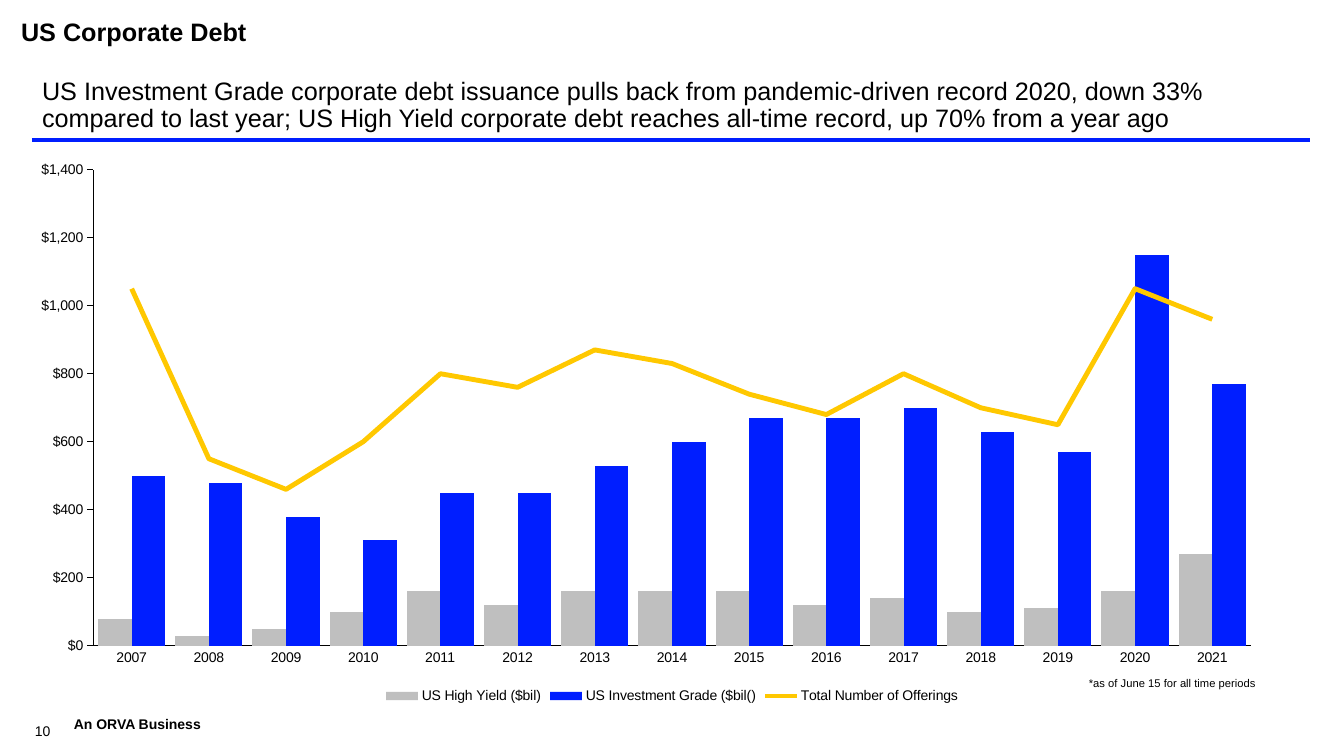
from dataclasses import dataclass

from lxml import etree
from pptx import Presentation
from pptx.chart.data import CategoryChartData
from pptx.dml.color import RGBColor as RGB
from pptx.enum.chart import XL_CHART_TYPE as ChartType
from pptx.enum.chart import XL_LEGEND_POSITION as LegendPosition
from pptx.enum.chart import XL_MARKER_STYLE as Marker
from pptx.enum.chart import XL_TICK_MARK as Tick
from pptx.enum.shapes import MSO_CONNECTOR as Connector
from pptx.enum.text import MSO_ANCHOR as Anchor
from pptx.enum.text import MSO_AUTO_SIZE as AutoSize
from pptx.enum.text import PP_ALIGN as Align
from pptx.oxml import parse_xml
from pptx.oxml.ns import nsdecls, qn
from pptx.util import Emu, Pt

# Content
TITLE = "US Corporate Debt"
HEADLINE = (
    "US Investment Grade corporate debt issuance pulls back from pandemic-driven "
    "record 2020, down 33% compared to last year; US High Yield corporate debt "
    "reaches all-time record, up 70% from a year ago"
)
FOOTNOTE = "*as of June 15 for all time periods"
BUSINESS = "An ORVA Business"
PAGE_NUMBER = "10"
YEARS = [str(year) for year in range(2007, 2022)]
HIGH_YIELD = [80, 30, 50, 100, 160, 120, 160, 160, 160, 120, 140, 100, 110, 160, 270]
INVESTMENT_GRADE = [500, 480, 380, 310, 450, 450, 530, 600, 670, 670, 700, 630, 570, 1150, 770]
OFFERINGS = [1050, 550, 460, 600, 800, 760, 870, 830, 740, 680, 800, 700, 650, 1050, 960]


@dataclass(frozen=True)
class Theme:
    font: str = "Arial"
    ink: RGB = RGB(0, 0, 0)
    blue: RGB = RGB(0x00, 0x1E, 0xFF)
    grey: RGB = RGB(0xBF, 0xBF, 0xBF)
    gold: RGB = RGB(0xFF, 0xC8, 0x00)
    heading: int = 18
    label: int = 10
    note: int = 8


THEME = Theme()
SERIES = [
    ("US High Yield ($bil)", HIGH_YIELD, THEME.grey),
    ("US Investment Grade ($bil()", INVESTMENT_GRADE, THEME.blue),
    ("Total Number of Offerings", OFFERINGS, THEME.gold),
]

# Places in px: left, top, width, height
SLIDE = (1344, 756)
TITLE_AT = (11, 15, 672, 32)
HEADLINE_AT = (32, 73, 1278, 65)
CHART_AT = (40, 149, 1264, 559)
FOOTNOTE_AT = (1079, 671, 250, 24)
BUSINESS_AT = (64, 710, 240, 27)
PAGE_NUMBER_AT = (35, 712, 60, 27)
RULE_Y = 140
PLOT = {"x": 0.042, "y": 0.037, "w": 0.916, "h": 0.852}


def px(length):
    return Emu(round(length * 914400 / 100.8))


def style_font(font, size, bold=False):
    font.name, font.size, font.bold = THEME.font, Pt(size), bold
    font.color.rgb = THEME.ink


def fill_text(box, place, text, size, bold=False, anchor=Anchor.MIDDLE):
    box.left, box.top, box.width, box.height = map(px, place)
    frame = box.text_frame
    frame.text = text
    frame.word_wrap = True
    frame.auto_size = AutoSize.NONE
    frame.vertical_anchor = anchor
    para = frame.paragraphs[0]
    para.alignment = Align.LEFT
    para.space_before = Pt(0)
    style_font(para.runs[0].font, size, bold)
    return frame


def add_text(page, place, text, size, **options):
    return fill_text(page.shapes.add_textbox(*map(px, place)), place, text, size, **options)


def move_to_line_plot(chart):
    """Turn the last column series into a line on the same axes."""
    columns = chart.plots[0]._element
    series = columns.findall(qn("c:ser"))[-1]
    for column_setting in series.findall(qn("c:invertIfNegative")):
        series.remove(column_setting)
    lines = parse_xml(
        f'<c:lineChart {nsdecls("c")}><c:grouping val="standard"/>'
        '<c:varyColors val="0"/><c:marker val="1"/></c:lineChart>'
    )
    lines.insert(2, series)
    for axis in columns.findall(qn("c:axId")):
        etree.SubElement(lines, qn("c:axId")).set("val", axis.get("val"))
    columns.addnext(lines)


def place_plot(chart):
    """Fix the inner plot area as fractions of the chart."""
    area = chart._chartSpace.find(f".//{qn('c:plotArea')}")
    for old in area.findall(qn("c:layout")):
        area.remove(old)
    settings = {"layoutTarget": "inner", "xMode": "edge", "yMode": "edge", **PLOT}
    items = "".join(f'<c:{name} val="{value}"/>' for name, value in settings.items())
    area.insert(0, parse_xml(
        f'<c:layout {nsdecls("c")}><c:manualLayout>{items}</c:manualLayout></c:layout>'
    ))


def add_debt_chart(page):
    data = CategoryChartData()
    data.categories = YEARS
    for name, values, _ in SERIES:
        data.add_series(name, values)
    chart = page.shapes.add_chart(
        ChartType.COLUMN_CLUSTERED, *map(px, CHART_AT), data
    ).chart
    style_font(chart.font, THEME.label)
    chart.has_title = False
    move_to_line_plot(chart)
    place_plot(chart)

    # Columns and line
    columns, lines = chart.plots
    columns.gap_width, columns.overlap = 30, 0
    columns.vary_by_categories = False
    for series, (_, _, color) in zip(columns.series, SERIES):
        series.format.fill.solid()
        series.format.fill.fore_color.rgb = color
    offerings = lines.series[0]
    offerings.smooth = False
    offerings.marker.style = Marker.NONE
    offerings.format.line.color.rgb = THEME.gold
    offerings.format.line.width = Pt(3.5)

    # Axes and legend
    for axis, tick in ((chart.category_axis, Tick.NONE), (chart.value_axis, Tick.OUTSIDE)):
        axis.has_major_gridlines = False
        axis.major_tick_mark, axis.minor_tick_mark = tick, Tick.NONE
        axis.format.line.color.rgb = THEME.ink
        axis.format.line.width = Pt(0.75)
        style_font(axis.tick_labels.font, THEME.label)
    dollars = chart.value_axis
    dollars.minimum_scale, dollars.maximum_scale, dollars.major_unit = 0, 1400, 200
    dollars.tick_labels.number_format = '"$"#,##0'
    dollars.tick_labels.number_format_is_linked = False
    chart.has_legend = True
    chart.legend.position = LegendPosition.BOTTOM
    chart.legend.include_in_layout = False
    style_font(chart.legend.font, THEME.label)


def add_rule(page):
    left, _, width, _ = HEADLINE_AT
    rule = page.shapes.add_connector(
        Connector.STRAIGHT, px(left), px(RULE_Y), px(left + width), px(RULE_Y)
    )
    rule.line.color.rgb = THEME.blue
    rule.line.width = Pt(3)
    etree.SubElement(rule._element.spPr, qn("a:effectLst"))


def main():
    deck = Presentation()
    deck.slide_width, deck.slide_height = map(px, SLIDE)
    page = deck.slides.add_slide(deck.slide_layouts[1])

    # Chart
    add_debt_chart(page)

    # Title and headline
    fill_text(page.shapes.title, TITLE_AT, TITLE, THEME.heading, bold=True)
    headline = fill_text(page.placeholders[1], HEADLINE_AT, HEADLINE, THEME.heading).paragraphs[0]
    headline.line_spacing = 0.9
    settings = headline._p.get_or_add_pPr()
    settings.set("marL", "0")
    settings.set("indent", "0")
    etree.SubElement(settings, qn("a:buNone"))
    add_rule(page)

    # Footer
    add_text(page, BUSINESS_AT, BUSINESS, THEME.label, bold=True)
    add_text(page, FOOTNOTE_AT, FOOTNOTE, THEME.note, anchor=Anchor.TOP)
    number = add_text(page, PAGE_NUMBER_AT, PAGE_NUMBER, THEME.label, anchor=Anchor.BOTTOM)
    number.word_wrap = False
    number.margin_left = number.margin_right = number.margin_top = number.margin_bottom = 0

    deck.save("out.pptx")


if __name__ == "__main__":
    main()
